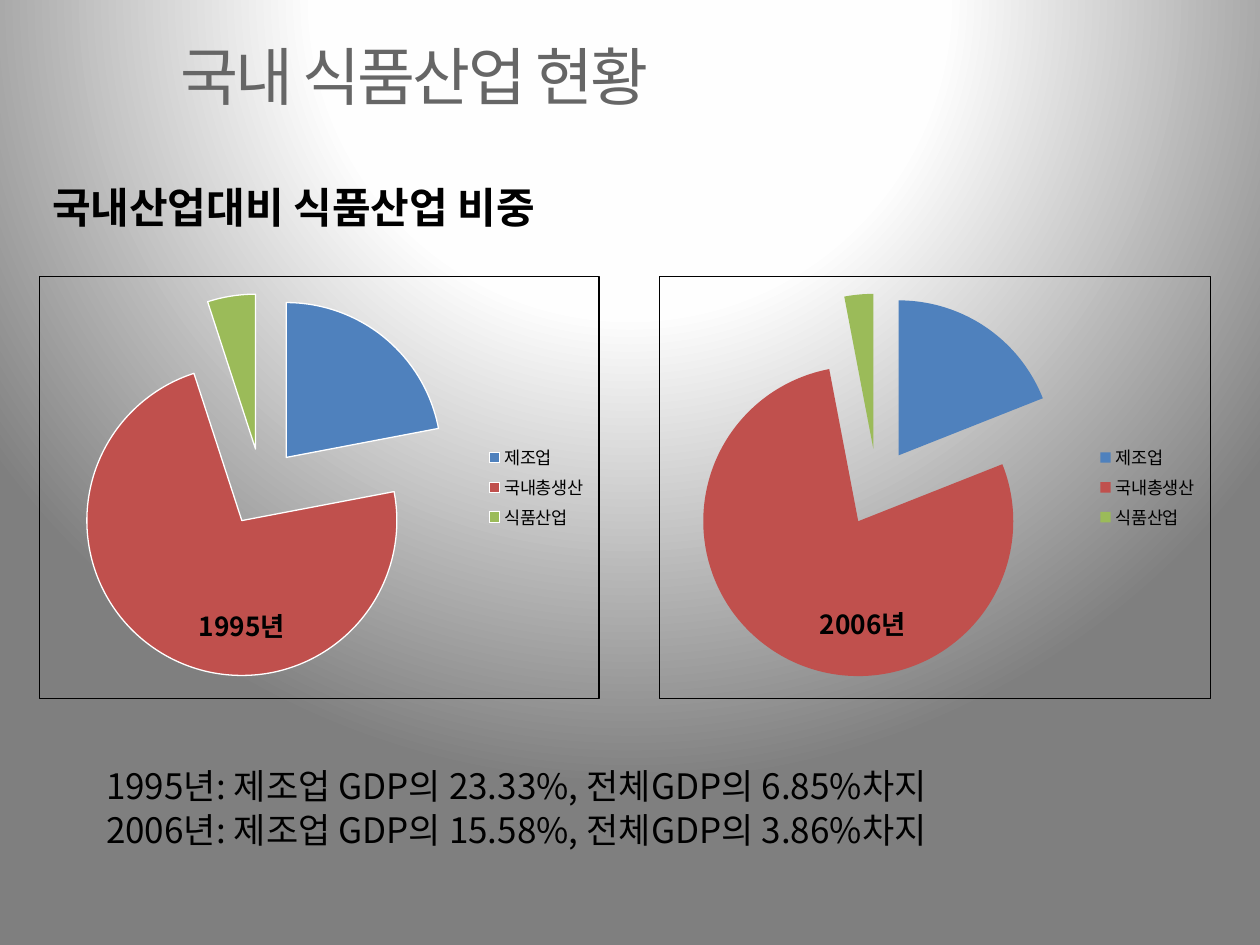
from dataclasses import dataclass

from lxml import etree
from pptx import Presentation
from pptx.chart.data import CategoryChartData
from pptx.dml.color import RGBColor
from pptx.enum.chart import XL_CHART_TYPE, XL_LEGEND_POSITION
from pptx.enum.text import MSO_ANCHOR
from pptx.oxml import parse_xml
from pptx.oxml.ns import qn
from pptx.util import Cm, Pt

PIE = XL_CHART_TYPE.PIE
RIGHT = XL_LEGEND_POSITION.RIGHT
MIDDLE = MSO_ANCHOR.MIDDLE
TOP = MSO_ANCHOR.TOP
NS = (
    'xmlns:a="http://schemas.openxmlformats.org/drawingml/2006/main" '
    'xmlns:c="http://schemas.openxmlformats.org/drawingml/2006/chart" '
    'xmlns:p="http://schemas.openxmlformats.org/presentationml/2006/main"'
)


@dataclass(frozen=True)
class Theme:
    font: str = "Noto Sans CJK KR"
    black: str = "000000"
    gray: str = "666666"
    white: str = "FFFFFF"
    slices: tuple = ("4F81BD", "C0504D", "9BBB59")
    glow: tuple = ((0, "FFFFFF"), (40, "FEFEFE"), (100, "7F7F7F"))
    title: int = 36
    head: int = 24
    body: int = 20
    year: int = 15
    chart: int = 10


THEME = Theme()
CATS = ("제조업", "국내총생산", "식품산업")


def set_font(font, props, size, color, bold=False):
    """Style a font, with the same face for Korean text."""
    font.name = THEME.font
    font.size = Pt(size)
    font.bold = bold
    font.color.rgb = RGBColor.from_string(color)
    face = etree.Element(qn("a:ea"), typeface=THEME.font)
    props.find(qn("a:latin")).addnext(face)


def add_glow(slide):
    """Fill the background with a round gradient centred above the slide."""
    stops = "".join(
        f'<a:gs pos="{pos * 1000}"><a:srgbClr val="{color}"/></a:gs>'
        for pos, color in THEME.glow
    )
    back = parse_xml(
        f'<p:bg {NS}><p:bgPr><a:gradFill rotWithShape="1">'
        f'<a:gsLst>{stops}</a:gsLst><a:path path="circle">'
        '<a:fillToRect l="50000" t="-80000" r="50000" b="180000"/>'
        '</a:path></a:gradFill><a:effectLst/></p:bgPr></p:bg>'
    )
    slide.element.cSld.insert(0, back)


def add_text(slide, text, box, size, color=THEME.black, bold=False,
             anchor=TOP, gap=None):
    """Add one line of text; gap is letter spacing in points."""
    frame = slide.shapes.add_textbox(*map(Cm, box)).text_frame
    frame.word_wrap = True
    frame.vertical_anchor = anchor
    run = frame.paragraphs[0].add_run()
    run.text = text
    props = run.font._element
    set_font(run.font, props, size, color, bold)
    if gap is not None:
        props.set("spc", str(round(gap * 100)))


def add_pie(slide, values, box, edge):
    """Add an exploded pie in a thin frame; edge outlines the slices."""
    data = CategoryChartData()
    data.categories = CATS
    data.add_series("Series 1", values)
    chart = slide.shapes.add_chart(PIE, *map(Cm, box), data).chart
    chart.has_title = False
    chart.has_legend = True
    chart.legend.position = RIGHT
    chart.legend.include_in_layout = False
    root = chart.element
    font = chart.font
    block = root.find(qn("c:txPr"))
    set_font(font, next(block.iter(qn("a:defRPr"))), THEME.chart, THEME.black)
    block.addprevious(parse_xml(
        f'<c:spPr {NS}><a:noFill/><a:ln w="9525"><a:solidFill>'
        f'<a:srgbClr val="{THEME.black}"/></a:solidFill></a:ln></c:spPr>'
    ))

    plot = chart.plots[0]
    plot.vary_by_categories = True
    series = plot.series[0]
    for i, color in enumerate(THEME.slices):
        style = series.points[i].format
        style.fill.solid()
        style.fill.fore_color.rgb = RGBColor.from_string(color)
        if edge:
            style.line.color.rgb = RGBColor.from_string(THEME.white)
            style.line.width = Pt(0.75)
        else:
            style.line.fill.background()
    burst = etree.Element(qn("c:explosion"), val="25")
    next(root.iter(qn("c:ser"))).find(qn("c:tx")).addnext(burst)


def main():
    deck = Presentation()
    deck.slide_width, deck.slide_height = Cm(25.4), Cm(19.05)
    slide = deck.slides.add_slide(deck.slide_layouts[6])
    add_glow(slide)
    add_text(slide, "국내 식품산업 현황", (3.38, 0.41, 22.02, 2.21),
             THEME.title, THEME.gray, anchor=MIDDLE, gap=-1.5)
    add_text(slide, "국내산업대비 식품산업 비중", (0.8, 3.53, 22.4, 1.27),
             THEME.head, bold=True)

    add_pie(slide, (22, 73, 5), (0.79, 5.56, 11.3, 8.53), True)
    add_pie(slide, (19, 78, 3), (13.28, 5.56, 11.13, 8.53), False)
    for year, left, top in (("1995년", 3.76, 12.17), ("2006년", 16.28, 12.14)):
        add_text(slide, year, (left, top, 2.59, 0.89), THEME.year, bold=True)

    notes = (
        "1995년: 제조업 GDP의 23.33%, 전체GDP의 6.85%차지",
        "2006년: 제조업 GDP의 15.58%, 전체GDP의 3.86%차지",
    )
    for i, note in enumerate(notes):
        add_text(slide, note, (1.89, 15.29 + 0.89 * i, 24, 1.12), THEME.body)
    deck.save("out.pptx")


if __name__ == "__main__":
    main()
